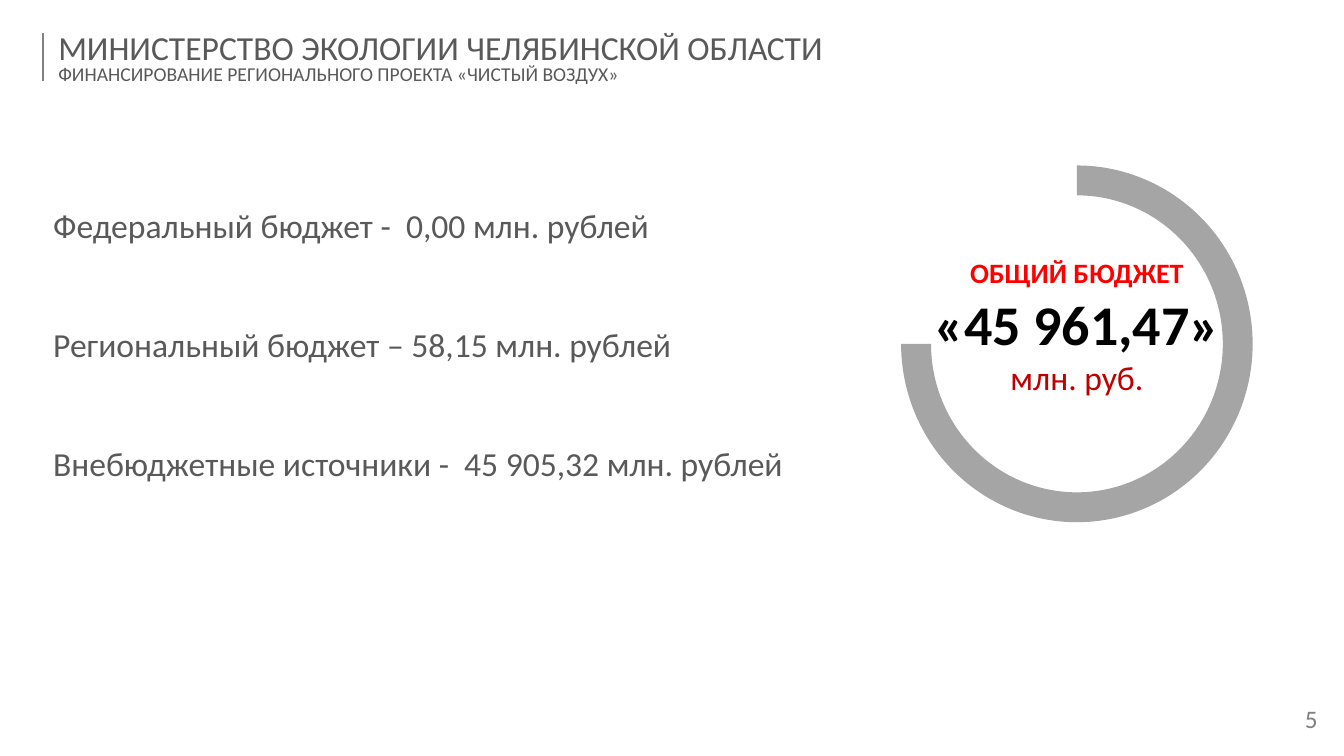
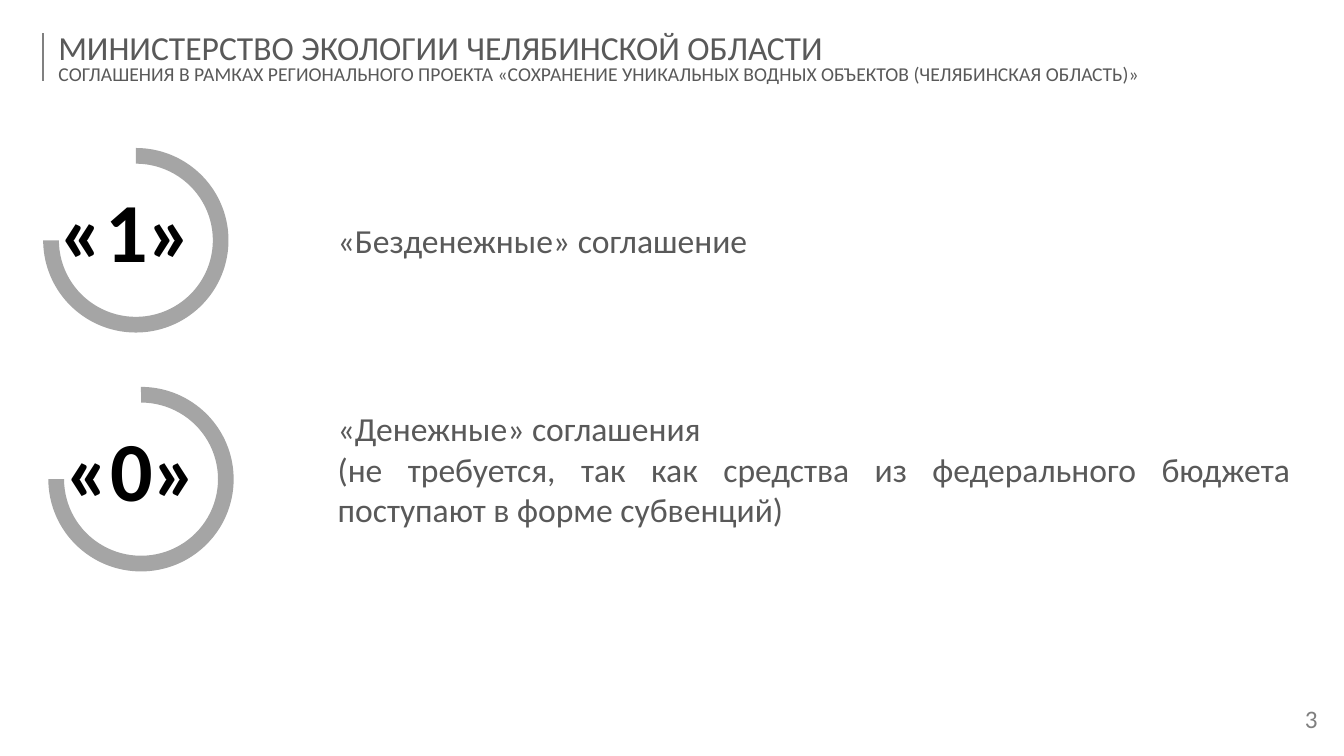
from dataclasses import dataclass
from pptx import Presentation
from pptx.dml.color import RGBColor
from pptx.enum.shapes import MSO_CONNECTOR as Connector, MSO_SHAPE as Preset
from pptx.enum.text import MSO_ANCHOR as Anchor, PP_ALIGN as Align
from pptx.oxml.ns import qn
from pptx.slide import Slide
from pptx.util import Cm, Pt
from lxml.etree import SubElement

COLORS = {
    "text": "595959",
    "muted": "808080",
    "ring": "A5A5A5",
    "label": "FF0000",
    "unit": "C00000",
    "figure": "000000",
}
FONT = "Calibri"
MINISTRY = "МИНИСТЕРСТВО ЭКОЛОГИИ ЧЕЛЯБИНСКОЙ ОБЛАСТИ"
RING_START, RING_END = 162, 108
RING_THICKNESS = 0.085


@dataclass(frozen=True)
class Box:
    left: float
    top: float
    width: float
    height: float

    def lengths(self) -> tuple[Cm, Cm, Cm, Cm]:
        return Cm(self.left), Cm(self.top), Cm(self.width), Cm(self.height)


@dataclass(frozen=True)
class Line:
    text: str
    size: int = 24
    color: str = "text"
    bold: bool = False


@dataclass(frozen=True)
class Agreement:
    count: str
    ring: Box
    description: Box
    lines: list[Line]


BUDGET_SOURCES = [
    "Федеральный бюджет -  0,00 млн. рублей",
    "Региональный бюджет – 58,15 млн. рублей",
    "Внебюджетные источники -  45 905,32 млн. рублей",
]
TOTAL_BUDGET = [
    Line("ОБЩИЙ БЮДЖЕТ", 20, "label", True),
    Line("«45 961,47» ", 40, "figure", True),
    Line("млн. руб.", 24, "unit"),
]
AGREEMENTS = [
    Agreement("«1» ", Box(1.09, 3.73, 4.67, 4.65), Box(8.26, 5.41, 14.38, 1.27),
              [Line("«Безденежные» соглашение")]),
    Agreement("«0» ", Box(1.22, 9.75, 4.67, 4.65), Box(8.26, 10.16, 24.51, 4.19),
              [Line("«Денежные» соглашения"),
               Line("(не требуется, так как средства из федерального бюджета "
                    "поступают в форме субвенций)")]),
]


def add_text(slide: Slide, box: Box, lines: list[Line], align: Align = Align.JUSTIFY,
             anchor: Anchor = Anchor.TOP, spacing: float = 1.0) -> None:
    frame = slide.shapes.add_textbox(*box.lengths()).text_frame
    frame.word_wrap = True
    frame.vertical_anchor = anchor
    frame.text = "\n".join(line.text for line in lines)
    for paragraph, line in zip(frame.paragraphs, lines):
        paragraph.alignment = align
        paragraph.line_spacing = spacing
        for run in paragraph.runs:
            run.font.name = FONT
            run.font.size = Pt(line.size)
            run.font.bold = line.bold
            run.font.color.rgb = RGBColor.from_string(COLORS[line.color])


def add_ring(slide: Slide, box: Box) -> None:
    ring = slide.shapes.add_shape(Preset.BLOCK_ARC, *box.lengths())
    for index, value in enumerate((RING_START, RING_END, RING_THICKNESS)):
        ring.adjustments[index] = value
    ring.shadow.inherit = False
    ring.fill.solid()
    ring.fill.fore_color.rgb = RGBColor.from_string(COLORS["ring"])
    ring.line.fill.background()


def add_page(deck: Presentation, subtitle: str, number: int) -> Slide:
    slide = deck.slides.add_slide(deck.slide_layouts[6])
    rule = slide.shapes.add_connector(Connector.STRAIGHT, Cm(1.09), Cm(0.84), Cm(1.09), Cm(2.03))
    rule.line.color.rgb = RGBColor.from_string(COLORS["muted"])
    rule.line.width = Pt(1.5)
    SubElement(rule._element.spPr, qn("a:effectLst"))
    add_text(slide, Box(1.22, 0.66, 32, 1.7), [Line(MINISTRY), Line(subtitle, 14)],
             Align.LEFT, Anchor.MIDDLE, 0.8)
    add_text(slide, Box(32.22, 17.53, 1.65, 1.27), [Line(str(number), 18, "muted")],
             Align.CENTER, Anchor.MIDDLE, 0.8)
    return slide


def build_financing(deck: Presentation) -> None:
    slide = add_page(deck, "ФИНАНСИРОВАНИЕ РЕГИОНАЛЬНОГО ПРОЕКТА «ЧИСТЫЙ ВОЗДУХ»", 5)
    add_ring(slide, Box(22.71, 4.17, 8.86, 8.99))
    for index, source in enumerate(BUDGET_SOURCES):
        add_text(slide, Box(1.09, 5.03 + 3 * index, 21, 1.27), [Line(source)])
    add_text(slide, Box(23.14, 6.3, 8, 3.84), TOTAL_BUDGET, Align.CENTER, Anchor.MIDDLE)


def build_agreements(deck: Presentation) -> None:
    slide = add_page(deck, "СОГЛАШЕНИЯ В РАМКАХ РЕГИОНАЛЬНОГО ПРОЕКТА «СОХРАНЕНИЕ УНИКАЛЬНЫХ "
                           "ВОДНЫХ ОБЪЕКТОВ (ЧЕЛЯБИНСКАЯ ОБЛАСТЬ)»", 3)
    for agreement in AGREEMENTS:
        ring = agreement.ring
        add_ring(slide, ring)
        add_text(slide, Box(ring.left - 0.79, ring.top + 0.62, 6.25, 2.82),
                 [Line(agreement.count, 60, "figure", True)], Align.CENTER, Anchor.MIDDLE)
        add_text(slide, agreement.description, agreement.lines)


def main() -> None:
    deck = Presentation()
    deck.slide_width, deck.slide_height = Cm(33.87), Cm(19.05)
    build_financing(deck)
    build_agreements(deck)
    deck.save("out.pptx")


if __name__ == "__main__":
    main()
